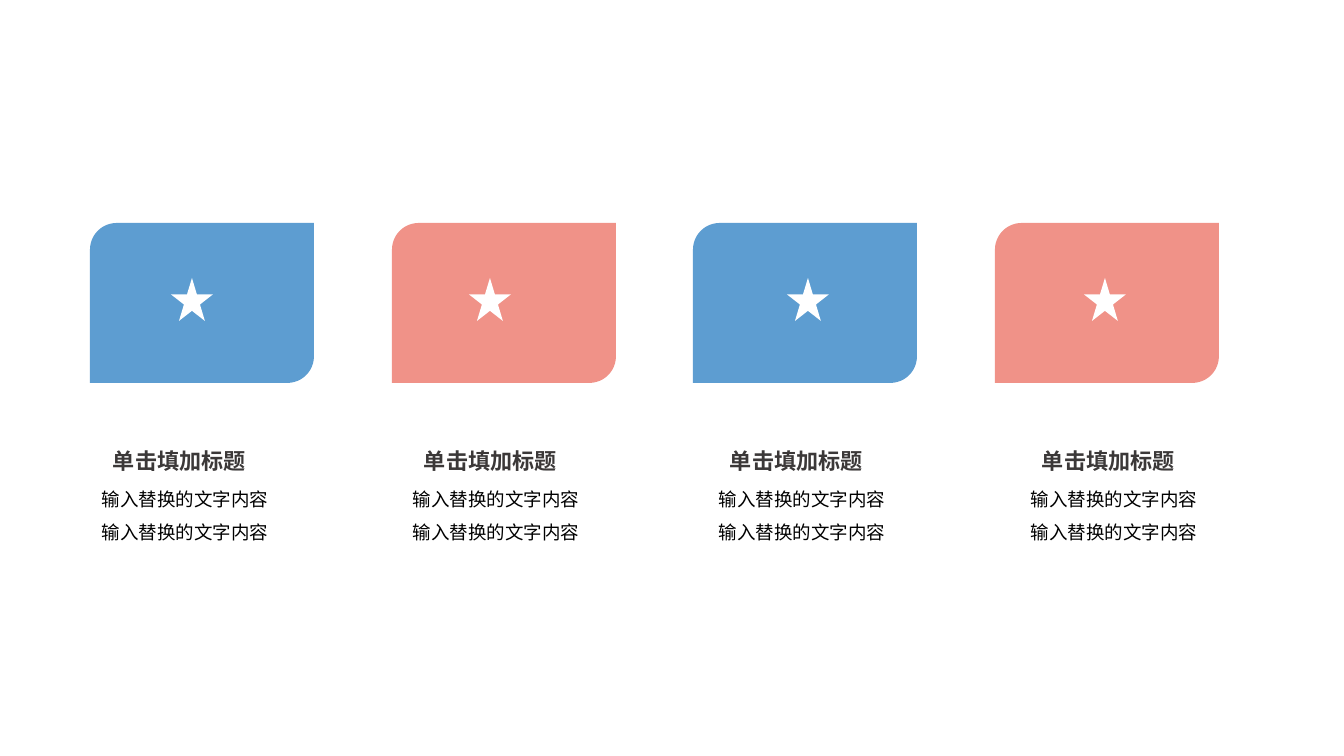
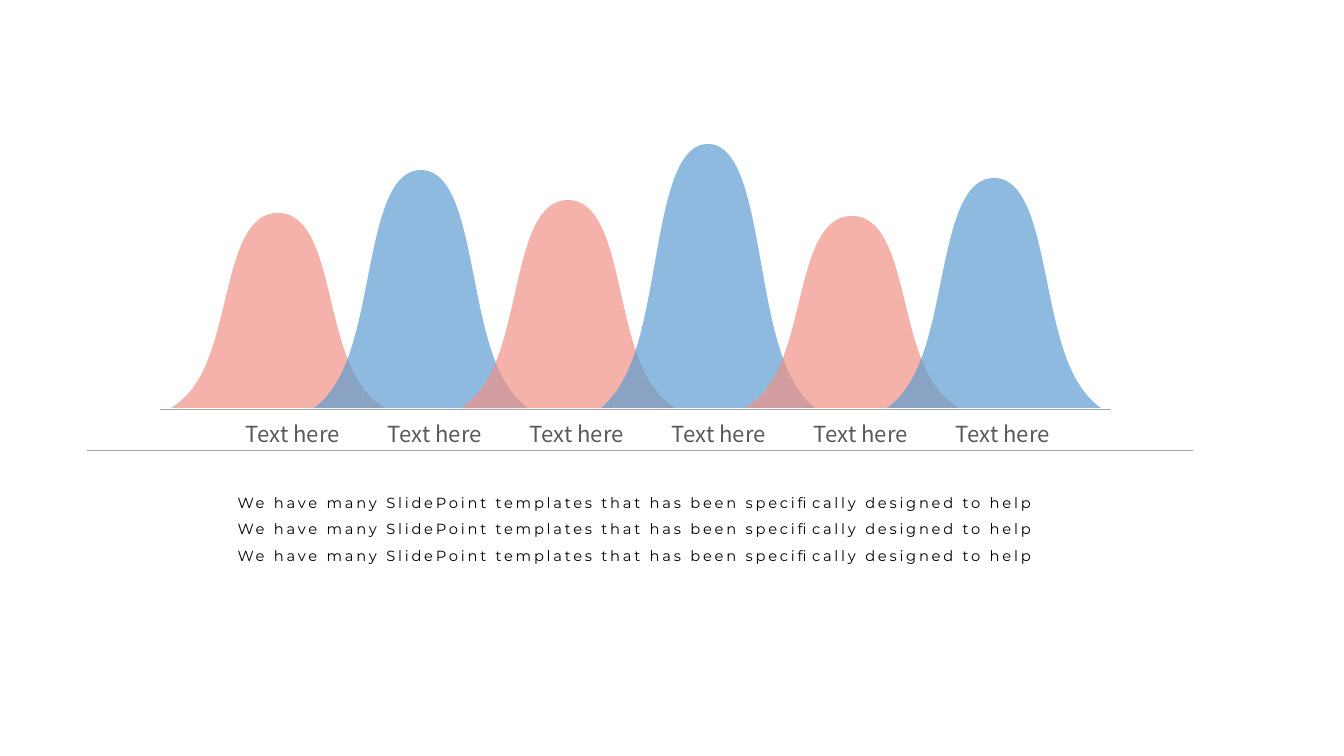
from lxml.etree import SubElement
from pptx import Presentation
from pptx.dml.color import RGBColor
from pptx.enum.shapes import MSO_CONNECTOR, MSO_SHAPE
from pptx.enum.text import MSO_ANCHOR, PP_ALIGN
from pptx.oxml import parse_xml
from pptx.oxml.ns import nsdecls, qn
from pptx.util import Pt

SCALE = 914400 / 100.8
COLORS = {"blue": "5D9DD1", "coral": "F09288", "white": "FFFFFF", "black": "000000",
          "title": "3B3838", "label": "595959", "rule": "A6A6A6"}
TINTS = ("blue", "coral")
CJK = "Noto Sans CJK SC"
LATIN = "Montserrat"
BELL = ((0.5, 0), (0.27, 0), (0.28, 0.52), (0.15, 0.81), (0.11, 0.9), (0.06, 0.96), (0, 1))


def px(*nums):
    """Turn px lengths into a list of EMU."""
    return [round(num * SCALE) for num in nums]


def rgb(name):
    """Look up a colour by its name."""
    return RGBColor.from_string(COLORS[name])


def paint(shape, color, alpha=None):
    """Give a shape a flat fill with no line or shadow."""
    shape.shadow.inherit = False
    shape.line.fill.background()
    shape.fill.solid()
    shape.fill.fore_color.rgb = rgb(color)
    if alpha:
        node = shape._element.spPr.find(".//" + qn("a:srgbClr"))
        SubElement(node, qn("a:alpha"), val=str(alpha * 1000))


def write(slide, box, lines, size, color, face=CJK, bold=False, align=PP_ALIGN.CENTER,
          before=0, lead=None, track=0, inset=True, anchor=MSO_ANCHOR.TOP):
    """Place a text box with one paragraph for each line."""
    frame = slide.shapes.add_textbox(*px(*box)).text_frame
    frame.word_wrap = True
    frame.vertical_anchor = anchor
    if not inset:
        frame.margin_left = frame.margin_right = 0
        frame.margin_top = frame.margin_bottom = 0
    frame.text = "\n".join(lines)
    for para in frame.paragraphs:
        para.alignment = align
        para.space_before = Pt(before)
        if lead:
            para.line_spacing = lead
        font = para.font
        font.size, font.bold, font.name = Pt(size), bold, face
        font.color.rgb = rgb(color)
        props = para._p.pPr.find(qn("a:defRPr"))
        SubElement(props, qn("a:ea"), typeface=face)
        if track:
            props.set("spc", str(track * 100))


def rule(slide, left, right, top):
    """Draw a thin level line."""
    line = slide.shapes.add_connector(MSO_CONNECTOR.STRAIGHT, *px(left, top, right, top))
    line.line.color.rgb = rgb("rule")
    line.line.width = Pt(0.5)
    SubElement(line._element.spPr, qn("a:effectLst"))


def card(slide, left, top, tint, star, text):
    """Place a card with its star, title and body."""
    panel = slide.shapes.add_shape(MSO_SHAPE.ROUND_2_DIAG_RECTANGLE, *px(left, top, 224, 160))
    paint(panel, tint)
    mark = slide.shapes.add_shape(MSO_SHAPE.STAR_5_POINT, *px(left + star, top + 55, 42, 43))
    paint(mark, "white")
    write(slide, (left + text, top + 260, 278, 67), ["输入替换的文字内容"] * 2,
          13.2, "black", before=7.9)
    write(slide, (left + text + 45, top + 219, 177, 32), ["单击填加标题"],
          15.8, "title", bold=True, before=4, lead=1.2, inset=False)


def bend(shape, starts):
    """Join three line steps into one cubic curve at each start."""
    steps = list(shape._element.iter(qn("a:lnTo")))
    for start in starts:
        arc = parse_xml(f"<a:cubicBezTo {nsdecls('a')}/>")
        steps[start].addprevious(arc)
        for step in steps[start:start + 3]:
            arc.append(step[0])
            step.getparent().remove(step)


def bell(slide, left, top, width, height, tint):
    """Draw a clear bell that fills the given box."""
    ring = BELL + tuple((1 - x, y) for x, y in reversed(BELL))
    pts = [px(left + x * width, top + y * height) for x, y in ring]
    pen = slide.shapes.build_freeform(*pts[0])
    pen.add_line_segments(pts[1:], close=True)
    shape = pen.convert_to_shape()
    bend(shape, (0, 3, 7, 10))
    paint(shape, tint, 70)


def cards(slide, left, top):
    """Fill a slide with a row of four cards."""
    for i, (star, text) in enumerate(((81, -44), (77, -35), (94, -30), (89, -20))):
        card(slide, left + round(905 * i / 3), top, TINTS[i % 2], star, text)


def bells(slide, left, base):
    """Fill a slide with six bells, their labels and a note."""
    rule(slide, left, left + 951, base + 1)
    rule(slide, left - 73, left + 1033, base + 42)
    peaks = ((11, 195), (154, 238), (301, 208), (441, 264), (585, 192), (727, 230))
    for i, (shift, high) in enumerate(peaks):
        bell(slide, left + shift, base - high, 214, high, TINTS[(i + 1) % 2])
        write(slide, (left + 86 + 142 * i, base + 12, 100, 27), ["Text here"], 15.8, "label",
              align=PP_ALIGN.LEFT, inset=False, anchor=MSO_ANCHOR.MIDDLE)
    note = "We have many SlidePoint templates that has been specifically designed to help"
    write(slide, (left + 14, base + 72, 922, 144), [note] * 3, 10.5, "black", LATIN,
          lead=1.5, track=2)


def main():
    """Build and save both slides."""
    deck = Presentation()
    deck.slide_width, deck.slide_height = px(1344, 756)
    for fill, left, top in ((cards, 90, 223), (bells, 160, 408)):
        fill(deck.slides.add_slide(deck.slide_layouts[6]), left, top)
    deck.save("out.pptx")


if __name__ == "__main__":
    main()
